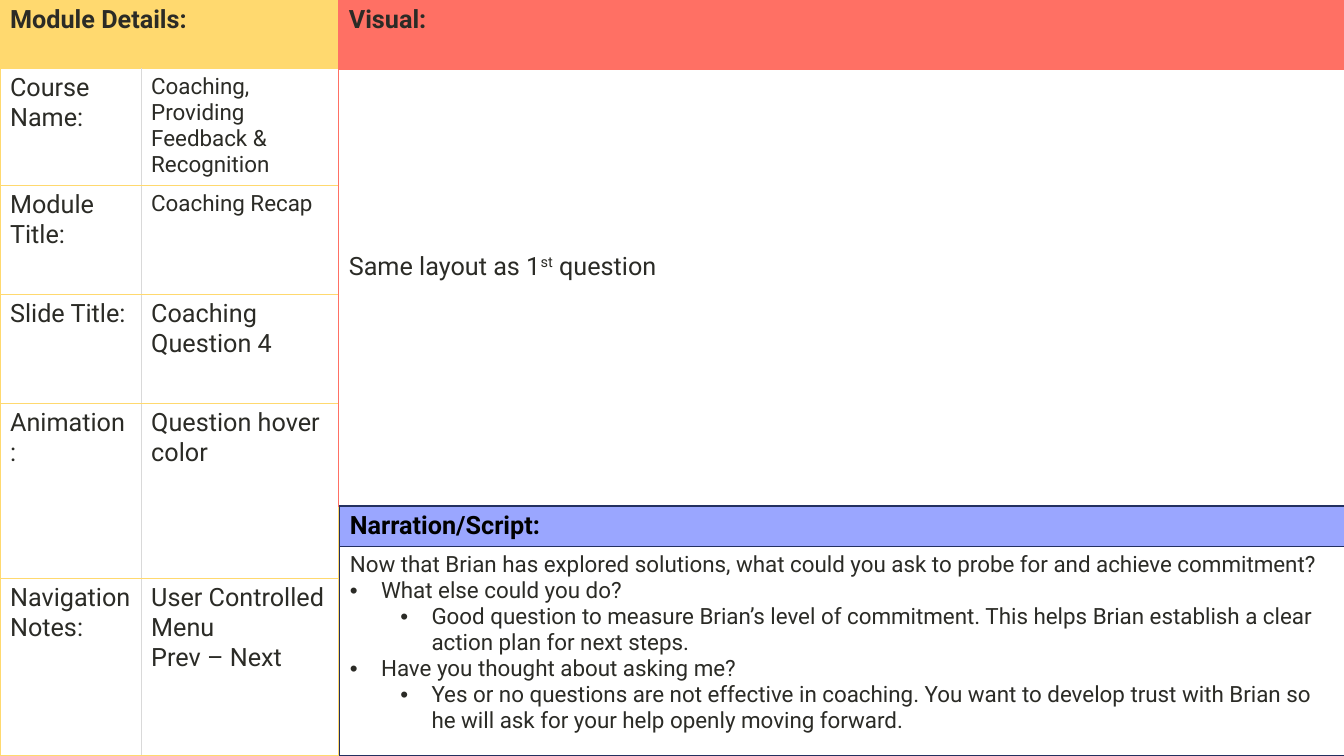
from lxml.etree import SubElement
from pptx import Presentation
from pptx.dml.color import RGBColor as Color
from pptx.oxml.ns import qn
from pptx.util import Inches, Pt

# Content: a cell is a list of paragraphs, each (bullet level, text); level 0 is plain
DETAILS = [
    ("Course Name:", ["Coaching, Providing Feedback & Recognition"], "small"),
    ("Module Title:", ["Coaching Recap"], "small"),
    ("Slide Title:", ["Coaching Question 4"], "body"),
    ("Animation:", ["Question hover color"], "body"),
    ("Navigation Notes:", ["User Controlled", "Menu", "Prev – Next"], "body"),
]
VISUAL_NOTE = [("Same layout as 1", 0), ("st", 30000), (" question", 0)]
NARRATION = [
    (0, "Now that Brian has explored solutions, what could you ask to probe for "
        "and achieve commitment?"),
    (1, "What else could you do?"),
    (2, "Good question to measure Brian’s level of commitment. This helps Brian "
        "establish a clear action plan for next steps."),
    (1, "Have you thought about asking me?"),
    (2, "Yes or no questions are not effective in coaching. You want to develop "
        "trust with Brian so he will ask for your help openly moving forward."),
]

THEME = {
    "font": "Roboto", "body": 18, "small": 16, "line": 1,
    "background": "F9F9F9", "paper": "FFFFFF", "text": "2B2B26", "black": "000000",
    "details": "FFD96F", "divider": "D9D9D9", "visual": "FF7064",
    "narration": "9AA6FF", "narration_line": "233060",
}

# Layout in inches
SLIDE_SIZE = (13.33, 7.5)
DETAIL_COLUMNS = [1.4, 1.96]
DETAIL_ROWS = [0.68, 1.16, 1.08, 1.08, 1.74, 1.76]
RIGHT_WIDTH = 9.98
VISUAL_ROWS = [0.69, 4.33]
VISUAL_NOTE_TOP = 1.81
BULLET_HANG, BULLET_STEP = 0.31, 0.5


def theme_color(name):
    return Color.from_string(THEME[name])


def add_grid(slide, left, top, columns, rows, line):
    table = slide.shapes.add_table(
        len(rows), len(columns), Inches(left), Inches(top),
        Inches(sum(columns)), Inches(sum(rows))).table
    table.first_row = table.horz_banding = False
    for column, width in zip(table.columns, columns):
        column.width = Inches(width)
    for row, height in zip(table.rows, rows):
        row.height = Inches(height)
        for index, cell in enumerate(row.cells):
            set_borders(cell, line, index > 0, index < len(columns) - 1)
            set_fill(cell, "paper")
    return table


def set_borders(cell, line, inner_left, inner_right):
    sides = {"a:lnL": inner_left, "a:lnR": inner_right, "a:lnT": False, "a:lnB": False}
    properties = cell._tc.get_or_add_tcPr()
    for tag, inner in sides.items():
        border = SubElement(properties, qn(tag), w=str(Pt(THEME["line"])))
        fill = SubElement(border, qn("a:solidFill"))
        SubElement(fill, qn("a:srgbClr"), val=THEME["divider" if inner else line])


def set_fill(cell, color):
    cell.fill.solid()
    cell.fill.fore_color.rgb = theme_color(color)


def add_run(paragraph, text, size="body", color="text", bold=False):
    run = paragraph.add_run()
    run.text = text
    run.font.color.rgb = theme_color(color)
    formats = {"name": THEME["font"], "size": Pt(THEME[size]), "bold": bold}
    for name, value in formats.items():
        setattr(run.font, name, value)
    return run


def set_bullet(paragraph, level):
    paragraph.level = level - 1
    properties = paragraph._p.get_or_add_pPr()
    properties.set("marL", str(Inches(BULLET_HANG + BULLET_STEP * (level - 1))))
    properties.set("indent", str(-Inches(BULLET_HANG)))
    SubElement(properties, qn("a:buFont"), typeface="Arial")
    SubElement(properties, qn("a:buChar"), char="•")


def write(cell, paragraphs, **style):
    frame = cell.text_frame
    for index, (level, text) in enumerate(paragraphs):
        paragraph = frame.add_paragraph() if index else frame.paragraphs[0]
        if level:
            set_bullet(paragraph, level)
        add_run(paragraph, text, **style)


def write_header(cell, text, fill, color="text"):
    set_fill(cell, fill)
    write(cell, [(0, text)], color=color, bold=True)


def main():
    presentation = Presentation()
    presentation.slide_width, presentation.slide_height = map(Inches, SLIDE_SIZE)
    slide = presentation.slides.add_slide(presentation.slide_layouts[6])
    slide.background.fill.solid()
    slide.background.fill.fore_color.rgb = theme_color("background")

    # Module details
    details = add_grid(slide, 0, 0, DETAIL_COLUMNS, DETAIL_ROWS, "details")
    details.cell(0, 0).merge(details.cell(0, 1))
    write_header(details.cell(0, 0), "Module Details:", "details")
    for row, (label, lines, size) in enumerate(DETAILS, start=1):
        write(details.cell(row, 0), [(0, label)])
        write(details.cell(row, 1), [(0, line) for line in lines], size=size)

    # Visual
    visual_left = sum(DETAIL_COLUMNS)
    visual = add_grid(slide, visual_left, 0, [RIGHT_WIDTH], VISUAL_ROWS, "visual")
    write_header(visual.cell(0, 0), "Visual:", "visual")
    note = visual.cell(1, 0)
    note.margin_top = Inches(VISUAL_NOTE_TOP)
    for text, baseline in VISUAL_NOTE:
        run = add_run(note.text_frame.paragraphs[0], text)
        if baseline:
            run._r.get_or_add_rPr().set("baseline", str(baseline))

    # Narration: header and script
    narration_left = visual_left + 0.01
    header = add_grid(slide, narration_left, 5.02, [RIGHT_WIDTH], [0.4], "narration_line")
    write_header(header.cell(0, 0), "Narration/Script:", "narration", "black")
    script = add_grid(slide, narration_left, 5.42, [RIGHT_WIDTH], [2.08], "narration_line")
    write(script.cell(0, 0), NARRATION, size="small")

    presentation.save("out.pptx")


if __name__ == "__main__":
    main()
